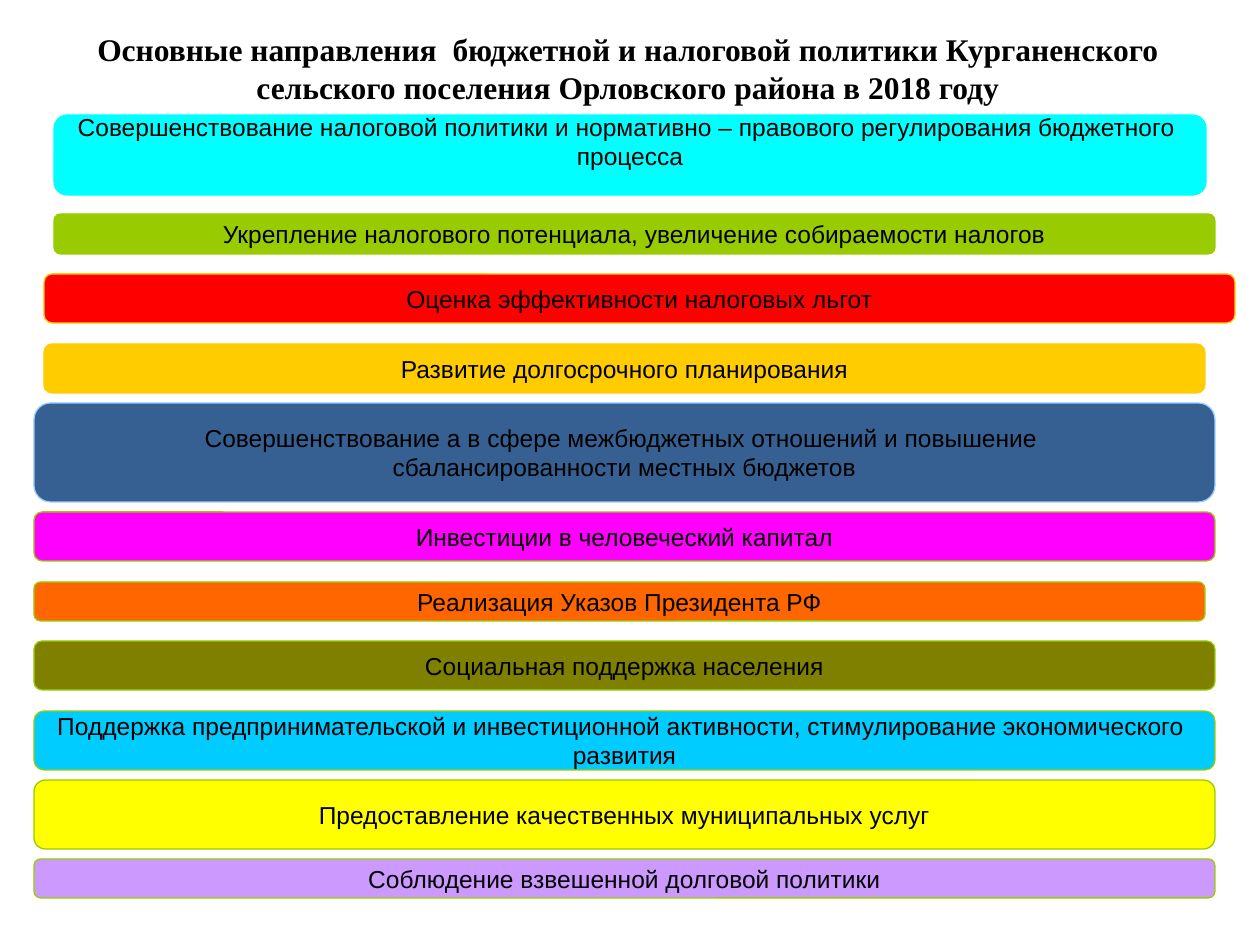
"""Build the slide on the main directions of budget and tax policy."""
from dataclasses import dataclass

from pptx import Presentation
from pptx.dml.color import RGBColor
from pptx.enum.shapes import MSO_SHAPE as Shape
from pptx.enum.text import MSO_ANCHOR as Anchor, MSO_AUTO_SIZE as AutoSize, PP_ALIGN as Align
from pptx.util import Pt

EMU_PER_PX = 914400 / 126


@dataclass(frozen=True)
class Theme:
    """Colours, fonts and sizes of the slide."""
    ink: str = "000000"
    title_font: str = "Times New Roman"
    title_size: int = 18
    bar_font: str = "Arial"
    bar_size: int = 14
    outline: float = 0.75
    cyan: str = "00FFFF"
    lime: str = "99CC00"
    red: str = "FF0000"
    gold: str = "FFCC00"
    navy: str = "376092"
    pale_blue: str = "99CCFF"
    magenta: str = "FF00FF"
    orange: str = "FF6600"
    olive: str = "808000"
    sky: str = "00CCFF"
    yellow: str = "FFFF00"
    lilac: str = "CC99FF"


THEME = Theme()
TITLE = ("Основные направления  бюджетной и налоговой политики Курганенского "
         "сельского поселения Орловского района в 2018 году")
DIRECTIONS = [
    ("Совершенствование налоговой политики и нормативно – правового регулирования бюджетного \nпроцесса",
     (54, 115, 1152, 80), THEME.cyan, THEME.cyan, 34),
    ("Укрепление налогового потенциала, увеличение собираемости налогов",
     (54, 214, 1161, 40), THEME.lime, THEME.lime, 6),
    ("Оценка эффективности налоговых льгот",
     (44, 274, 1191, 49), THEME.red, THEME.gold, 6),
    ("Развитие долгосрочного планирования",
     (44, 344, 1161, 49), THEME.gold, THEME.gold, 6),
    ("Совершенствование а в сфере межбюджетных отношений и повышение \nсбалансированности местных бюджетов",
     (34, 403, 1181, 99), THEME.navy, THEME.pale_blue, 6),
    ("Инвестиции в человеческий капитал",
     (34, 512, 1181, 49), THEME.magenta, THEME.lime, 6),
    ("Реализация Указов Президента РФ",
     (34, 582, 1171, 39), THEME.orange, THEME.lime, 6),
    ("Социальная поддержка населения",
     (34, 641, 1181, 49), THEME.olive, THEME.lime, 6),
    ("Поддержка предпринимательской и инвестиционной активности, стимулирование экономического \nразвития",
     (34, 711, 1181, 59), THEME.sky, THEME.lime, 6),
    ("Предоставление качественных муниципальных услуг",
     (34, 780, 1181, 69), THEME.yellow, THEME.lime, 6),
    ("Соблюдение взвешенной долговой политики",
     (34, 859, 1181, 39), THEME.lilac, THEME.lime, 6),
]


def px(length):
    """Turn pixels into EMU."""
    return round(length * EMU_PER_PX)


def write(frame, text, font, size, bold, bottom):
    """Put centred text into a frame, one paragraph a line."""
    frame.text = text
    frame.auto_size = AutoSize.NONE
    frame.vertical_anchor = Anchor.MIDDLE
    frame.margin_top, frame.margin_bottom = px(6), px(bottom)
    for line in frame.paragraphs:
        line.alignment = Align.CENTER
        line.font.name = font
        line.font.size = Pt(size)
        line.font.bold = bold
        line.font.color.rgb = RGBColor.from_string(THEME.ink)


def add_title(slide):
    """Place the heading in the title placeholder."""
    heading = slide.shapes.title
    heading.left, heading.top, heading.width, heading.height = map(px, (59, 55, 1138, 59))
    write(heading.text_frame, TITLE, THEME.title_font, THEME.title_size, True, 40)
    heading.text_frame.word_wrap = True


def add_direction(slide, text, box, fill, outline, bottom):
    """Add one rounded bar naming a policy direction."""
    bar = slide.shapes.add_shape(Shape.ROUNDED_RECTANGLE, *map(px, box))
    bar.shadow.inherit = False
    bar.fill.solid()
    bar.fill.fore_color.rgb = RGBColor.from_string(fill)
    bar.line.color.rgb = RGBColor.from_string(outline)
    bar.line.width = Pt(THEME.outline)
    write(bar.text_frame, text, THEME.bar_font, THEME.bar_size, False, bottom)
    bar.text_frame.word_wrap = False


def main():
    """Build and save the slide."""
    deck = Presentation()
    deck.slide_width, deck.slide_height = px(1260), px(945)
    slide = deck.slides.add_slide(deck.slide_layouts[5])
    add_title(slide)
    for direction in DIRECTIONS:
        add_direction(slide, *direction)
    deck.save("out.pptx")


if __name__ == "__main__":
    main()
